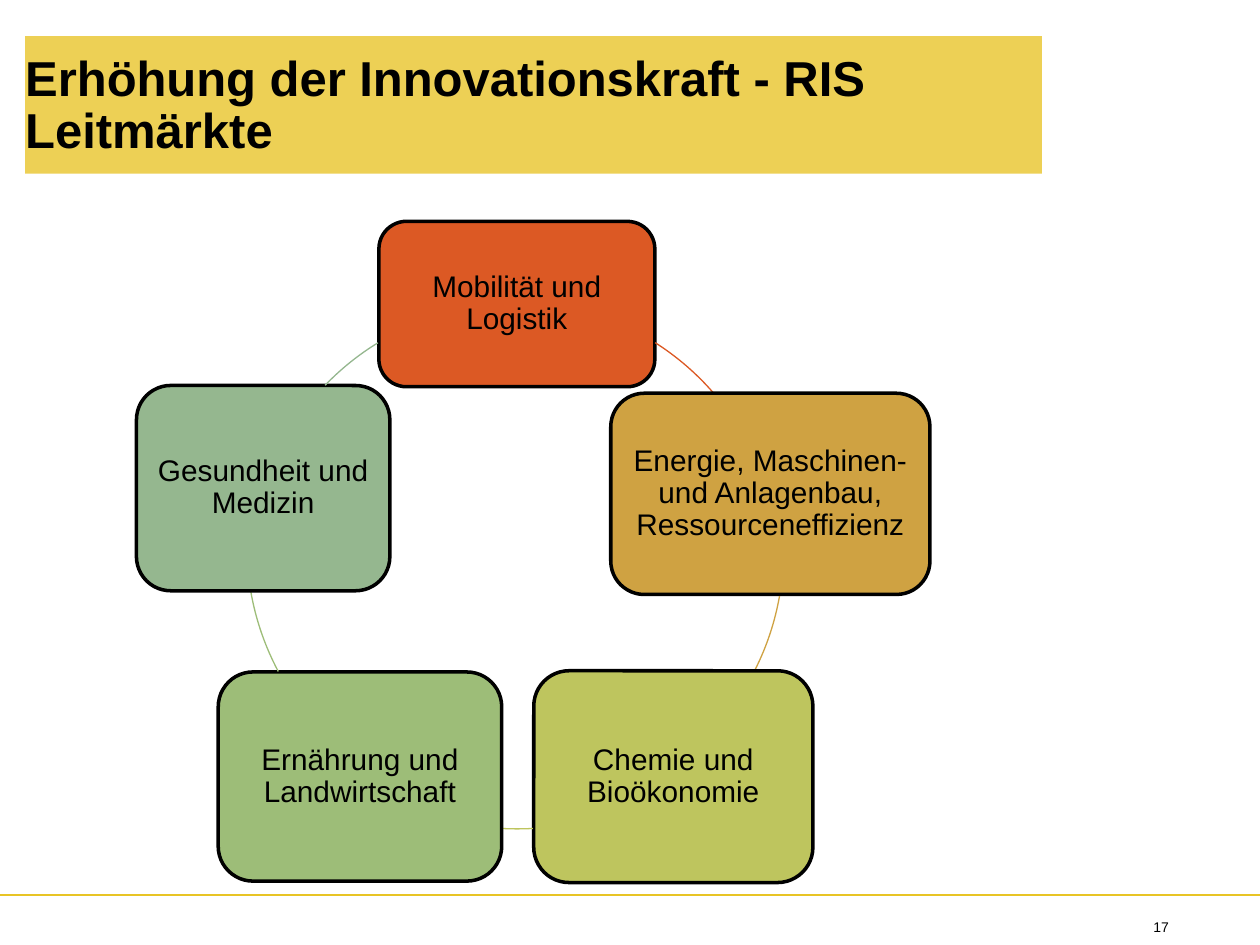
import lxml.etree
import pptx
import pptx.util
import pptx.dml.color
import pptx.enum.shapes
import pptx.enum.text
import pptx.oxml.ns
from dataclasses import dataclass
from typing import Any

Pt = pptx.util.Pt
RGB = pptx.dml.color.RGBColor.from_string
SHAPE = pptx.enum.shapes.MSO_SHAPE
ALIGN = pptx.enum.text.PP_ALIGN
ANCHOR = pptx.enum.text.MSO_ANCHOR


@dataclass(frozen=True)
class Theme:
    font: str = "Arial"
    ink: str = "000000"
    banner: str = "EDD055"
    rule: str = "E8C425"
    title_size: float = 28
    market_size: float = 17
    number_size: float = 8
    ring_diameter: float = 304.5


@dataclass(frozen=True)
class Market:
    label: str
    color: str
    box: tuple[float, float, float, float]
    ring_at: tuple[float, float]
    angles: tuple[float, float]


THEME = Theme()
MARKETS = [
    Market("Mobilität und Logistik", "DC5924",
           (216.5, 126.5, 157.7, 94.5), (140.4, 172), (302.5, 319)),
    Market("Energie, Maschinen- und Anlagenbau, Ressourceneffizienz", "CFA242",
           (349, 224.7, 182.4, 115), (143.3, 162), (10, 26.7)),
    Market("Chemie und Bioökonomie", "BEC55E",
           (305, 383.3, 159.5, 121), (143.3, 169.2), (86.6, 93.4)),
    Market("Ernährung und Landwirtschaft", "9DBD78",
           (124.7, 384, 162, 119.5), (141.1, 159.8), (151.9, 170.1)),
    Market("Gesundheit und Medizin", "95B78F",
           (78, 220.3, 144.8, 117.3), (143.3, 173.5), (223.9, 238.5)),
]


def apply(target: Any, values: dict[str, Any]) -> None:
    for name, value in values.items():
        setattr(target, name, value)


def place(sp: Any, left: float, top: float, width: float, height: float) -> None:
    apply(sp, {"left": Pt(left), "top": Pt(top), "width": Pt(width), "height": Pt(height)})


def set_line(sp: Any, color: str, width: float) -> None:
    sp.line.color.rgb = RGB(color)
    sp.line.width = Pt(width)


def write(sp: Any, text: str, size: float, anchor: Any, align: Any,
          insets: tuple[float, float, float, float],
          spacing: Any = None, bold: bool = False) -> None:
    tf = sp.text_frame
    left, top, right, bottom = map(Pt, insets)
    apply(tf, {"word_wrap": True, "auto_size": pptx.enum.text.MSO_AUTO_SIZE.NONE,
               "vertical_anchor": anchor, "margin_left": left, "margin_top": top,
               "margin_right": right, "margin_bottom": bottom})
    p = tf.paragraphs[0]
    apply(p, {"alignment": align, "line_spacing": spacing, "space_before": Pt(0)})
    for i, line in enumerate(text.split("\n")):
        if i:
            p.add_line_break()
        r = p.add_run()
        r.text = line
        apply(r.font, {"name": THEME.font, "size": Pt(size), "bold": bold})
        r.font.color.rgb = RGB(THEME.ink)


def draw_title(s: Any, text: str) -> None:
    sp = s.shapes.title
    place(sp, 14.4, 20.7, 581, 78.5)
    sp.fill.solid()
    sp.fill.fore_color.rgb = RGB(THEME.banner)
    write(sp, text, THEME.title_size, ANCHOR.BOTTOM, ALIGN.LEFT,
          (0, 14.4, 14.4, 8.6), Pt(30), True)


def draw_rule(s: Any, y: float, width: float) -> None:
    sp = s.shapes.add_connector(pptx.enum.shapes.MSO_CONNECTOR.STRAIGHT,
                                Pt(0), Pt(y), Pt(width), Pt(y))
    set_line(sp, THEME.rule, 1)
    lxml.etree.SubElement(sp._element.spPr, pptx.oxml.ns.qn("a:effectLst"))


def draw_market(s: Any, market: Market) -> None:
    sp = s.shapes.add_shape(SHAPE.ROUNDED_RECTANGLE, *map(Pt, market.box))
    sp.shadow.inherit = False
    sp.fill.solid()
    sp.fill.fore_color.rgb = RGB(market.color)
    set_line(sp, THEME.ink, 2)
    write(sp, market.label, THEME.market_size, ANCHOR.MIDDLE, ALIGN.CENTER,
          (5, 5, 5, 5), 0.9)


def draw_arc(s: Any, market: Market) -> None:
    size = Pt(THEME.ring_diameter)
    sp = s.shapes.add_shape(SHAPE.ARC, *map(Pt, market.ring_at), size, size)
    sp.shadow.inherit = False
    sp.fill.background()
    set_line(sp, market.color, 0.75)
    for i, angle in enumerate(market.angles):
        sp.adjustments[i] = angle * 0.6


def draw_number(s: Any, text: str) -> None:
    sp = s.shapes.add_textbox(Pt(607), Pt(519.8), Pt(113), Pt(20.2))
    write(sp, text, THEME.number_size, ANCHOR.BOTTOM, ALIGN.CENTER, (14.4, 5.8, 14.4, 5.8))


def main() -> None:
    prs = pptx.Presentation()
    apply(prs, {"slide_width": Pt(720), "slide_height": Pt(540)})
    s = prs.slides.add_slide(prs.slide_layouts.get_by_name("Title Only"))
    draw_rule(s, 511.6, 720)
    draw_title(s, "Erhöhung der Innovationskraft - RIS\nLeitmärkte")
    for market in MARKETS:
        draw_market(s, market)
        draw_arc(s, market)
    draw_number(s, "17")
    prs.save("out.pptx")


if __name__ == "__main__":
    main()
